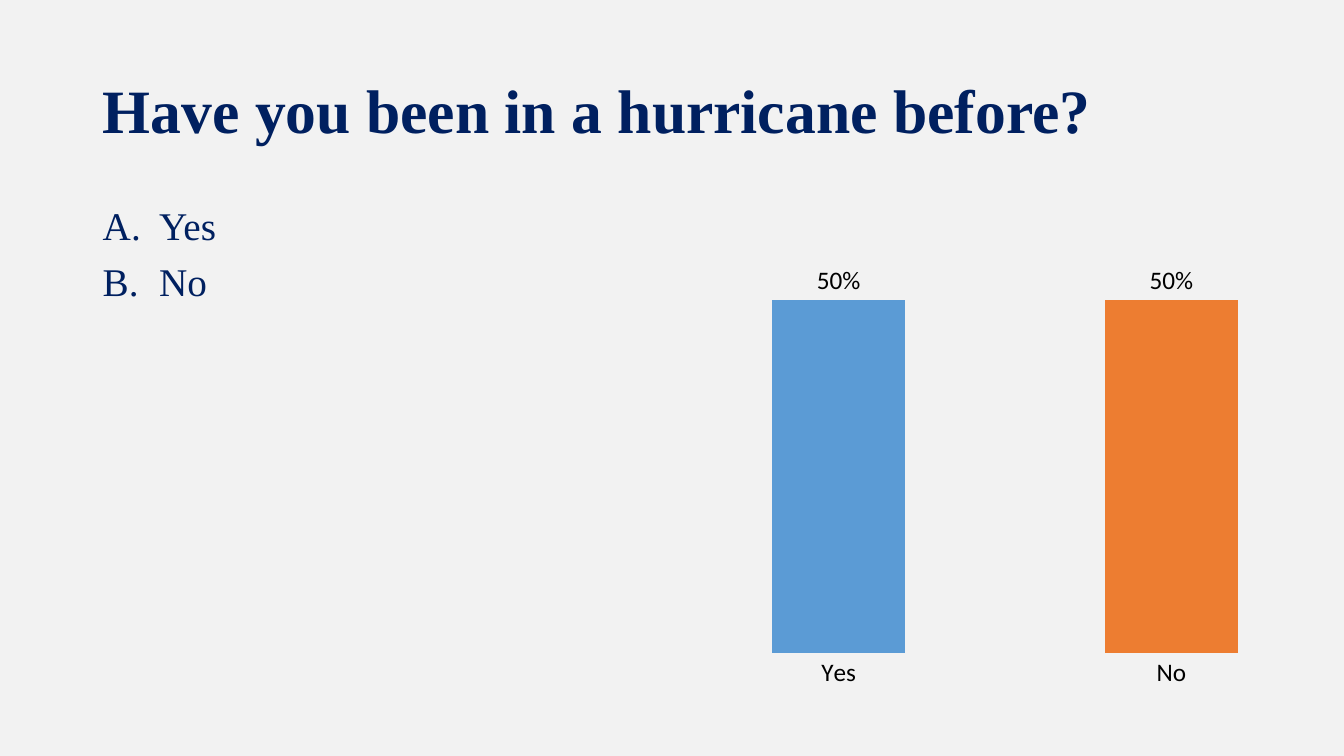
from lxml import etree
from pptx import Presentation
from pptx.chart.data import CategoryChartData
from pptx.dml.color import RGBColor
from pptx.enum.chart import XL_CHART_TYPE, XL_LABEL_POSITION, XL_TICK_LABEL_POSITION, XL_TICK_MARK
from pptx.enum.text import MSO_ANCHOR, MSO_AUTO_SIZE, PP_ALIGN
from pptx.oxml import parse_xml
from pptx.oxml.ns import nsdecls, qn
from pptx.util import Inches, Pt

COLUMN = XL_CHART_TYPE.COLUMN_CLUSTERED
ABOVE = XL_LABEL_POSITION.OUTSIDE_END
NO_TICKS = XL_TICK_MARK.NONE
NO_LABELS = XL_TICK_LABEL_POSITION.NONE
MIDDLE, TOP = MSO_ANCHOR.MIDDLE, MSO_ANCHOR.TOP
LEFT = PP_ALIGN.LEFT
NO_FIT = MSO_AUTO_SIZE.NONE

COLORS = {"back": "F2F2F2", "navy": "002060", "black": "000000",
          "blue": "5B9BD5", "orange": "ED7D31"}
ANSWERS = ["Yes", "No"]
SHARES = [0.5, 0.5]


def color(name):
    return RGBColor.from_string(COLORS[name])


def write(frame, lines, size, bold=False, anchor=TOP, gap=0, indent=0):
    """Fill a text frame; a non-zero indent letters the lines A., B., ..."""
    frame.word_wrap = True
    frame.auto_size = NO_FIT
    frame.vertical_anchor = anchor
    for i, line in enumerate(lines):
        para = frame.paragraphs[0] if i == 0 else frame.add_paragraph()
        para.alignment = LEFT
        para.line_spacing = 0.9
        para.space_before = Pt(gap if i else 0)
        if indent:
            props = para._p.get_or_add_pPr()
            props.set("marL", str(Inches(indent)))
            props.set("indent", str(-Inches(indent)))
            etree.SubElement(props, qn("a:buFont"), typeface="+mj-lt")
            etree.SubElement(props, qn("a:buAutoNum"), type="alphaUcPeriod")
        run = para.add_run()
        run.text = line
        run.font.name = "Times New Roman"
        run.font.size = Pt(size)
        run.font.bold = bold
        run.font.color.rgb = color("navy")


class Poll:
    """One poll slide: a question, its lettered answers and the result."""

    def __init__(self, deck):
        self.slide = deck.slides.add_slide(deck.slide_layouts[5])
        fill = self.slide.background.fill
        fill.solid()
        fill.fore_color.rgb = color("back")

    def title(self, text, left, top, width, height):
        shape = self.slide.shapes.title
        shape.left, shape.top = Inches(left), Inches(top)
        shape.width, shape.height = Inches(width), Inches(height)
        write(shape.text_frame, [text], 44, bold=True, anchor=MIDDLE)

    def list(self, lines, left, top, width, height):
        box = self.slide.shapes.add_textbox(
            Inches(left), Inches(top), Inches(width), Inches(height))
        write(box.text_frame, lines, 28, gap=10, indent=0.56)

    def chart(self, names, values, fills, left, top, width, height):
        data = CategoryChartData(number_format="0%")
        data.categories = names
        data.add_series("Series 1", values)
        chart = self.slide.shapes.add_chart(
            COLUMN, Inches(left), Inches(top), Inches(width), Inches(height), data).chart
        chart.has_title = chart.has_legend = False
        chart.font.name = "Calibri"
        chart.font.size = Pt(18)
        chart.font.color.rgb = color("black")

        for axis in (chart.category_axis, chart.value_axis):
            axis.has_major_gridlines = False
            axis.major_tick_mark = NO_TICKS
            axis.format.line.fill.background()
        scale = chart.value_axis
        scale.minimum_scale, scale.maximum_scale = 0, 0.6
        scale.tick_label_position = NO_LABELS

        plot = chart.plots[0]
        plot.gap_width = 150
        plot.vary_by_categories = False
        plot.has_data_labels = True
        labels = plot.data_labels
        labels.show_value = True
        labels.number_format, labels.number_format_is_linked = "0%", False
        labels.position = ABOVE
        for i, name in enumerate(fills):
            fill = plot.series[0].points[i].format.fill
            fill.solid()
            fill.fore_color.rgb = color(name)
        self.place(chart, x=0.01, y=0.07, w=0.99, h=0.81)

    def place(self, chart, **parts):
        """Set the plot area, labels included, as shares of the chart."""
        sizes = "".join(f'<c:{k} val="{v}"/>' for k, v in parts.items())
        area = chart._chartSpace.chart.plotArea
        area.insert(0, parse_xml(
            f'<c:layout {nsdecls("c")}><c:manualLayout><c:layoutTarget val="outer"/>'
            f'<c:xMode val="edge"/><c:yMode val="edge"/>{sizes}</c:manualLayout></c:layout>'))


def main():
    deck = Presentation()
    deck.slide_width, deck.slide_height = Inches(13.33), Inches(7.5)
    poll = Poll(deck)
    poll.chart(ANSWERS, SHARES, ["blue", "orange"], 6.6, 1.88, 6.67, 5.62)
    poll.title("Have you been in a hurricane before?", 0.92, 0.4, 11.5, 1.45)
    poll.list(ANSWERS, 0.92, 2, 5.75, 4.76)
    deck.save("out.pptx")


if __name__ == "__main__":
    main()
